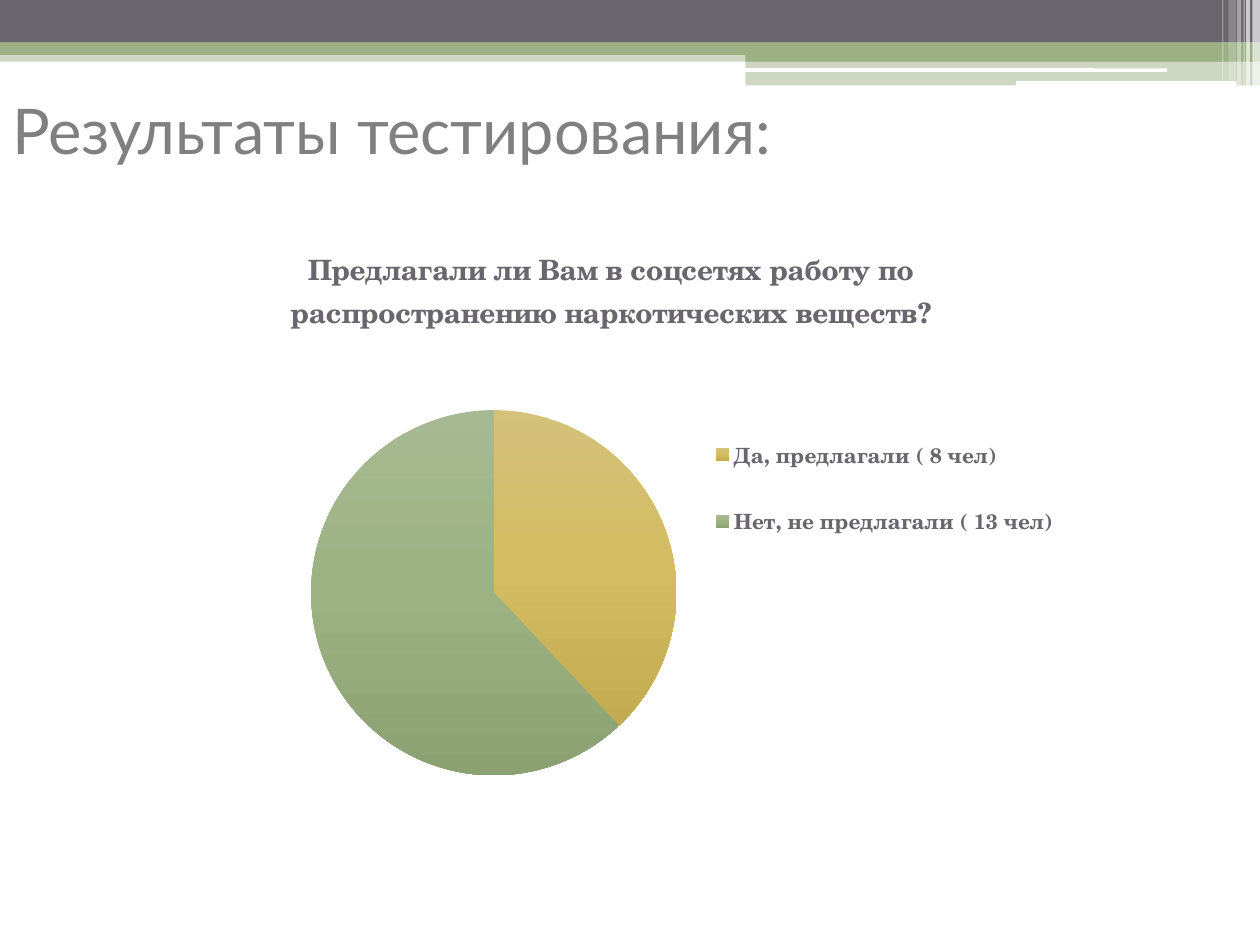
from copy import deepcopy

from pptx import Presentation
from pptx.chart.data import CategoryChartData
from pptx.dml.color import RGBColor as Color
from pptx.enum.chart import XL_CHART_TYPE as ChartType, XL_LEGEND_POSITION as LegendPosition
from pptx.enum.shapes import MSO_SHAPE as Shape
from pptx.enum.text import MSO_ANCHOR as Anchor, PP_ALIGN as Align
from pptx.oxml import parse_xml
from pptx.oxml.ns import nsdecls, qn
from pptx.util import Pt

TITLE = "Результаты тестирования:"
QUESTION = "Предлагали ли Вам в соцсетях работу по распространению наркотических веществ?"
ANSWERS = [("Да, предлагали ( 8 чел)", 38), ("Нет, не предлагали ( 13 чел)", 62)]

THEME = {
    "grey": "69676D", "green": "9CB084", "white": "FFFFFF",
    "title": {"name": "Lato", "size": Pt(36), "bold": False, "color": "808080"},
    "question": {"name": "TeX Gyre Schola", "size": Pt(16), "bold": True, "color": "69676D"},
    "legend": {"name": "TeX Gyre Schola", "size": Pt(12), "bold": True, "color": "69676D"},
    "slices": [("D4C17A", "D3BC61", "C2AB50"), ("A7B992", "9CB282", "8BA171")],
}

BANDS = [
    (Shape.RECTANGLE, "green", 50, (0, 28.8, 720, 6.5)),
    (Shape.RECTANGLE, "grey", 100, (0, 0, 720, 24.4)),
    (Shape.RECTANGLE, "green", 100, (0, 24.4, 720, 7)),
    (Shape.RECTANGLE, "green", 100, (426, 28.2, 294, 7)),
    (Shape.RECTANGLE, "green", 50, (426, 34.8, 294, 14)),
    (Shape.ROUNDED_RECTANGLE, "white", 100, (425.5, 39, 241.5, 2)),
    (Shape.ROUNDED_RECTANGLE, "white", 100, (580.5, 46.2, 126, 2.8)),
]
STRIPES = [
    (715.7, 4.3, 49, 65), (712.1, 2.2, 49, 65), (710.6, 0.7, 49, 60),
    (707, 2.2, 49, 40), (702, 4.3, 46, 20), (698.4, 0.7, 46, 30),
]
BANDS += [(Shape.RECTANGLE, "white", opacity, (left, 0, width, height))
          for left, width, height, opacity in STRIPES]

TITLE_BOX = (0, 31.7, 496, 84.2)
CHART_BOX = (105.1, 128.2, 527, 329)
PLOT_PERCENT = {"x": 13.8, "y": 31, "w": 39.6, "h": 66}
LEGEND_PERCENT = {"x": 56, "y": 31.2, "w": 40, "h": 29.2}
QUESTION_PERCENT = {"x": 11, "y": 2.6}


def points(box):
    return [Pt(value) for value in box]


def style_font(font, style):
    for name, value in style.items():
        if name == "color":
            font.color.rgb = Color.from_string(value)
        else:
            setattr(font, name, value)


def add_band(slide, kind, color, opacity, box):
    shape = slide.shapes.add_shape(kind, *points(box))
    shape.shadow.inherit = False
    shape.line.fill.background()
    shape.fill.solid()
    shape.fill.fore_color.rgb = Color.from_string(THEME[color])
    if opacity < 100:
        fill_color = shape.fill._xPr.find(".//" + qn("a:srgbClr"))
        fill_color.append(parse_xml(f'<a:alpha {nsdecls("a")} val="{opacity * 1000}"/>'))


def add_title(slide):
    title = slide.shapes.title
    slide.shapes._spTree.append(title._element)
    title.left, title.top, title.width, title.height = points(TITLE_BOX)
    title.text = TITLE
    title.text_frame.vertical_anchor = Anchor.MIDDLE
    paragraph = title.text_frame.paragraphs[0]
    paragraph.alignment = Align.LEFT
    style_font(paragraph.runs[0].font, THEME["title"])


def place(element, index, percent, inner=False):
    for layout in element.findall(qn("c:layout")):
        element.remove(layout)
    target = '<c:layoutTarget val="inner"/>' if inner else ""
    modes = "".join(f'<c:{key}Mode val="edge"/>' for key in "xy")
    sizes = "".join(f'<c:{key} val="{value / 100:.3f}"/>' for key, value in percent.items())
    element.insert(index, parse_xml(
        f'<c:layout {nsdecls("c")}><c:manualLayout>{target}{modes}{sizes}</c:manualLayout></c:layout>'))


def color_slice(point, colors):
    fill = point.format.fill
    fill.gradient()
    fill.gradient_angle = 270
    last_stop = fill.gradient_stops[-1]._gs
    last_stop.addnext(deepcopy(last_stop))
    for stop, position, color in zip(fill.gradient_stops, (0, 0.5, 1), colors):
        stop.position = position
        stop.color.rgb = Color.from_string(color)
    point.format.line.fill.background()


def add_pie(slide):
    data = CategoryChartData()
    data.categories = [answer for answer, share in ANSWERS]
    data.add_series("Series 1", [share for answer, share in ANSWERS])
    chart = slide.shapes.add_chart(ChartType.PIE, *points(CHART_BOX), data).chart

    chart.has_title = True
    chart.chart_title.text_frame.text = QUESTION
    paragraph = chart.chart_title.text_frame.paragraphs[0]
    paragraph.line_spacing = 1.3
    style_font(paragraph.runs[0].font, THEME["question"])

    chart.has_legend = True
    chart.legend.position = LegendPosition.BOTTOM
    chart.legend.include_in_layout = False
    style_font(chart.legend.font, THEME["legend"])

    plot = chart.plots[0]
    plot.vary_by_categories = True
    for index, colors in enumerate(THEME["slices"]):
        color_slice(plot.series[0].points[index], colors)

    place(chart.chart_title._element, 1, QUESTION_PERCENT)
    place(chart.legend._element, 1, LEGEND_PERCENT)
    place(plot._element.getparent(), 0, PLOT_PERCENT, inner=True)


def main():
    """Build the slide with the survey results and save it."""
    presentation = Presentation()
    presentation.slide_width, presentation.slide_height = Pt(720), Pt(540)
    slide = presentation.slides.add_slide(presentation.slide_layouts[5])
    for band in BANDS:
        add_band(slide, *band)
    add_title(slide)
    add_pie(slide)
    presentation.save("out.pptx")


if __name__ == "__main__":
    main()
